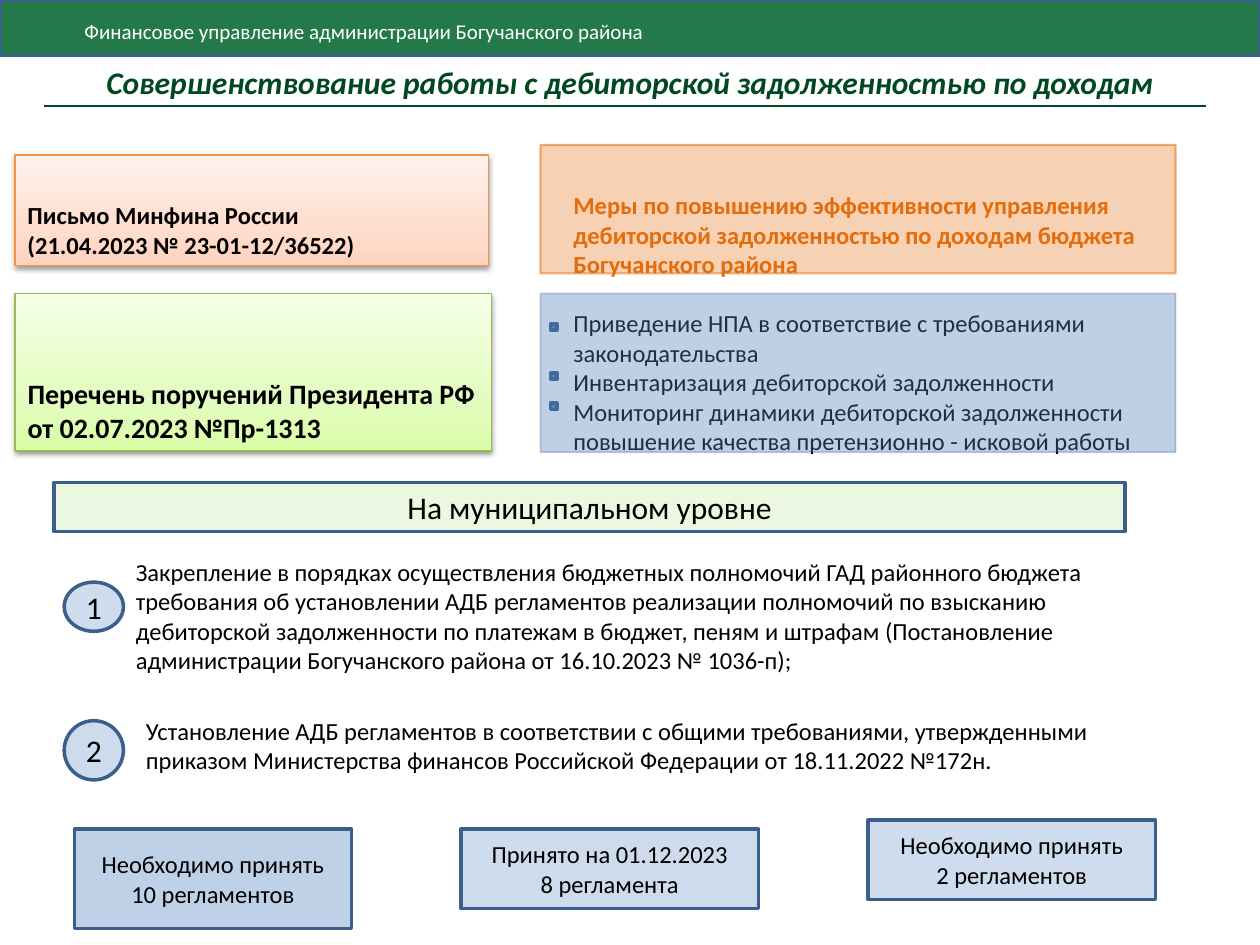
import copy
import pptx
import pptx.util
import pptx.dml.color
import pptx.enum.shapes
import pptx.enum.text
import pptx.oxml
import pptx.oxml.ns
from pptx.util import Inches

FONT = "Calibri"
BLUE, NAVY, ORANGE, GREEN, BLACK = "4F81BD", "3A5F8C", "E46C0A", "004821", "000000"
SHAPES = pptx.enum.shapes.MSO_SHAPE
ANCHORS = pptx.enum.text.MSO_ANCHOR
CENTER = pptx.enum.text.PP_ALIGN.CENTER
LEFT = pptx.enum.text.PP_ALIGN.LEFT

HEADER = "Финансовое управление администрации Богучанского района"
TITLE = "Совершенствование работы с дебиторской задолженностью по доходам"
MEASURES_HEADING = ("Меры по повышению эффективности управления дебиторской "
                    "задолженностью по доходам бюджета Богучанского района")
MEASURES = [
    "Приведение НПА в соответствие с требованиями законодательства",
    "Инвентаризация дебиторской задолженности",
    "Мониторинг динамики дебиторской задолженности",
    "повышение качества претензионно - исковой работы",
]
MARKER_TOPS = [2.57, 2.96, 3.2]
DOCUMENTS = [
    ((0.12, 1.23, 3.76, 0.88), ["Письмо Минфина России", "(21.04.2023 № 23-01-12/36522)"],
     14, 0.36, ["FFD2BD", "FFDED0", "FFF2ED"], "F69240"),
    ((0.12, 2.33, 3.78, 1.25), ["Перечень поручений Президента РФ", "от 02.07.2023 №Пр-1313"],
     16, 0.66, ["DAFDA7", "E4FCC2", "F5FFE7"], "98B955"),
]
PANELS = [
    ((4.29, 1.15, 5.04, 1.02), ORANGE, 31, ORANGE, 1.25, 55),
    ((4.29, 2.33, 5.04, 1.26), BLUE, 37, "17375E", 1, 26),
]
LEVEL = "На муниципальном уровне"
STEPS = [
    ("1", (0.51, 4.62, 0.47, 0.39), 27, (0.98, 4.06, 8.03, 1.41),
     "Закрепление в порядках осуществления бюджетных полномочий ГАД районного бюджета "
     "требования об установлении АДБ регламентов реализации полномочий по взысканию "
     "дебиторской задолженности по платежам в бюджет, пеням и штрафам (Постановление "
     "администрации Богучанского района от 16.10.2023 № 1036-п);"),
    ("2", (0.51, 5.72, 0.47, 0.47), 28, (1.06, 5.32, 8.03, 0.94),
     "Установление АДБ регламентов в соответствии с общими требованиями, утвержденными "
     "приказом Министерства финансов Российской Федерации от 18.11.2022 №172н."),
]
RESULTS = [
    ((0.59, 6.58, 2.2, 0.79), 36, ["Необходимо принять", "10 регламентов"]),
    ((3.66, 6.58, 2.36, 0.63), 28, ["Принято на 01.12.2023", "8 регламента"]),
    ((6.89, 6.51, 2.28, 0.63), 27, ["Необходимо принять", "2 регламентов"]),
]


def rgb(value):
    return pptx.dml.color.RGBColor.from_string(value)


def add_xml(parent, xml):
    namespace = pptx.oxml.ns.nsdecls("a")
    parent.append(pptx.oxml.parse_xml(xml.replace("/>", f" {namespace}/>", 1)
                                      if xml.endswith("/>") and xml.count("<") == 1
                                      else xml.replace(">", f" {namespace}>", 1)))


def set_alpha(solid_fill, percent):
    add_xml(solid_fill[0], f'<a:alpha val="{percent * 1000}"/>')


def place(shape, box):
    shape.left, shape.top, shape.width, shape.height = map(Inches, box)


def write(shape, lines, size, color=BLACK, align=LEFT, anchor=ANCHORS.MIDDLE,
          top=0.05, bold=False, italic=False):
    frame = shape.text_frame
    frame.text = "\n".join(lines)
    frame.word_wrap = True
    frame.auto_size = pptx.enum.text.MSO_AUTO_SIZE.NONE
    frame.vertical_anchor = anchor
    frame.margin_top = Inches(top)
    for paragraph in frame.paragraphs:
        paragraph.alignment = align
        for run in paragraph.runs:
            font = run.font
            font.name, font.size = FONT, pptx.util.Pt(size)
            font.bold, font.italic = bold, italic
            font.color.rgb = rgb(color)


def add_block(slide, box, fill, alpha=100, line=NAVY, width=2, line_alpha=100,
              kind=SHAPES.RECTANGLE):
    shape = slide.shapes.add_shape(kind, *map(Inches, box))
    shape.shadow.inherit = False
    shape.fill.solid()
    shape.fill.fore_color.rgb = rgb(fill)
    shape.line.color.rgb = rgb(line)
    shape.line.width = pptx.util.Pt(width)
    properties = shape._element.spPr
    set_alpha(properties.find(pptx.oxml.ns.qn("a:solidFill")), alpha)
    set_alpha(properties.find(pptx.oxml.ns.qn("a:ln"))[0], line_alpha)
    return shape


def apply_gradient(shape, colors):
    shape.fill.gradient()
    shape.fill.gradient_angle = 90
    stops = shape._element.spPr.find(".//" + pptx.oxml.ns.qn("a:gsLst"))
    stops.insert(1, copy.deepcopy(stops[0]))
    for stop, color, position in zip(shape.fill.gradient_stops, colors, (0, 0.35, 1)):
        stop.color.rgb = rgb(color)
        stop.position = position


def add_shadow(shape):
    effects = shape._element.spPr.find(pptx.oxml.ns.qn("a:effectLst"))
    add_xml(effects, '<a:outerShdw blurRad="39400" dist="20300" dir="5400000" rotWithShape="0">'
                     '<a:srgbClr val="000000"><a:alpha val="38000"/></a:srgbClr></a:outerShdw>')


def fill_measures(body):
    place(body, (4.45, 1.15, 5, 2.52))
    write(body, [MEASURES_HEADING] + MEASURES, 14, anchor=ANCHORS.TOP, top=0.36)
    for index, paragraph in enumerate(body.text_frame.paragraphs):
        properties = paragraph._p.get_or_add_pPr()
        properties.set("marL", "0")
        properties.set("indent", "0")
        add_xml(properties, "<a:buNone/>")
        paragraph.space_before = pptx.util.Pt(17 if index == 1 else 0)
    heading = body.text_frame.paragraphs[0].runs[0].font
    heading.bold = True
    heading.color.rgb = rgb(ORANGE)


def main():
    presentation = pptx.Presentation()
    presentation.slide_width, presentation.slide_height = Inches(10), Inches(7.5)
    slide = presentation.slides.add_slide(presentation.slide_layouts[1])
    title, body = slide.placeholders

    header = add_block(slide, (0, 0, 10, 0.44), "00642D", 86)
    write(header, [HEADER], 12, "FFFFFF", top=0.11)
    header.text_frame.margin_left = Inches(0.67)
    place(title, (0, 0.44, 10, 0.42))
    write(title, [TITLE], 18, GREEN, CENTER, bold=True, italic=True)

    for box, lines, size, top, colors, line in DOCUMENTS:
        document = add_block(slide, box, colors[0], line=line, width=0.75)
        apply_gradient(document, colors)
        add_shadow(document)
        write(document, lines, size, anchor=ANCHORS.TOP, top=top, bold=True)

    fill_measures(body)
    for top in MARKER_TOPS:
        add_block(slide, (4.37, top, 0.05, 0.05), BLUE)
    for panel in PANELS:
        add_block(slide, *panel)

    rule = slide.shapes.add_connector(pptx.enum.shapes.MSO_CONNECTOR.STRAIGHT,
                                      *map(Inches, (0.35, 0.84, 9.57, 0.84)))
    rule.line.color.rgb = rgb(GREEN)
    rule.line.width = pptx.util.Pt(1.25)
    add_xml(rule._element.spPr, "<a:effectLst/>")

    level = add_block(slide, (0.43, 3.83, 8.5, 0.39), "92D050", 17)
    write(level, [LEVEL], 18, align=CENTER)

    for number, badge_box, alpha, text_box, text in STEPS:
        badge = add_block(slide, badge_box, BLUE, alpha, kind=SHAPES.OVAL)
        write(badge, [number], 18, align=CENTER)
        description = slide.shapes.add_textbox(*map(Inches, text_box))
        write(description, [text], 14, anchor=ANCHORS.TOP, top=0.36)

    for box, alpha, lines in RESULTS:
        write(add_block(slide, box, BLUE, alpha), lines, 14, align=CENTER)

    presentation.save("out.pptx")


if __name__ == "__main__":
    main()
